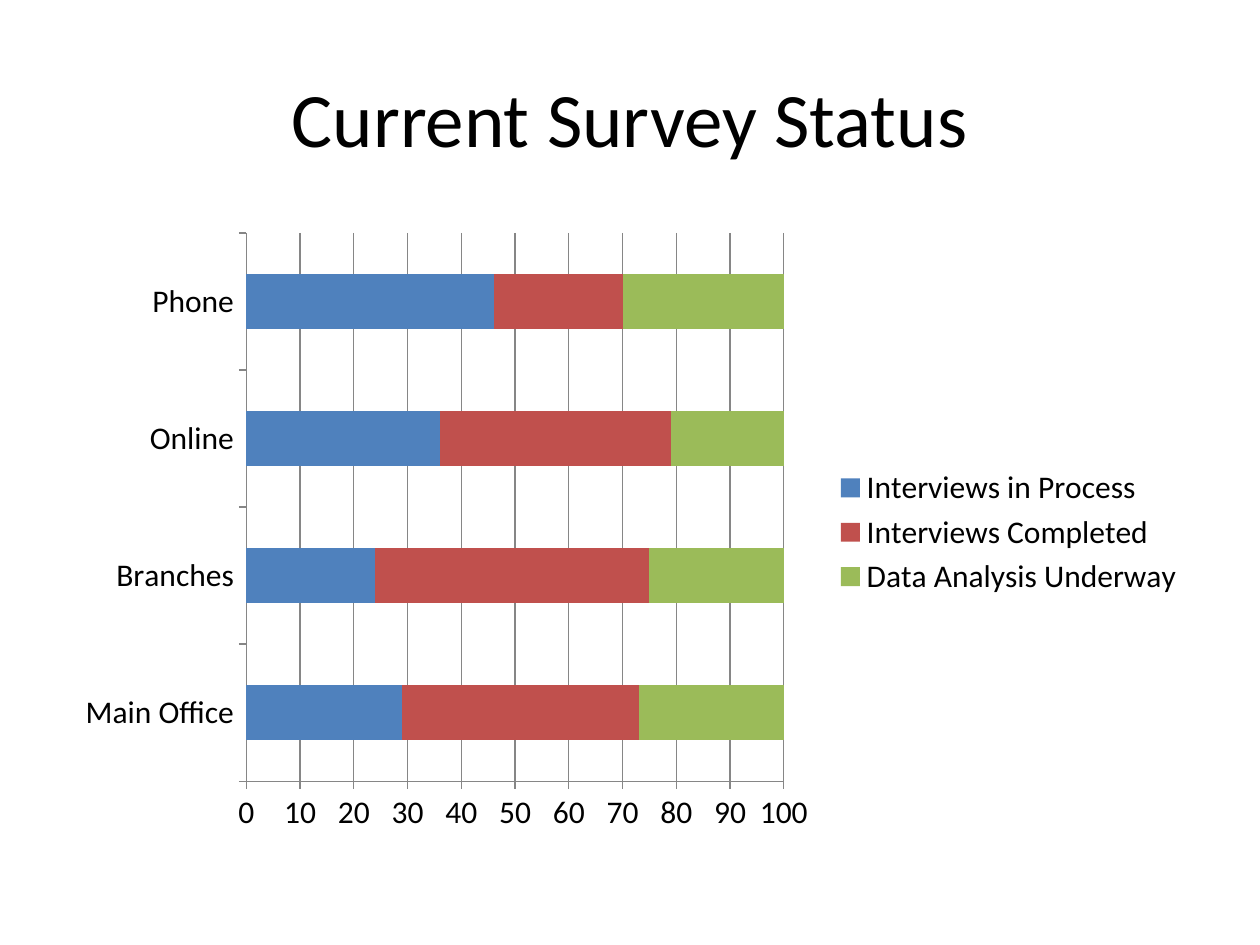
from pptx import Presentation
from pptx.chart.data import CategoryChartData
from pptx.dml.color import RGBColor
from pptx.enum.chart import XL_CHART_TYPE as ChartType, XL_LEGEND_POSITION as LegendPosition
from pptx.enum.chart import XL_TICK_MARK as TickMark
from pptx.enum.text import MSO_ANCHOR as Anchor, PP_ALIGN as Align
from pptx.util import Pt

FONT = "Calibri"
BLACK = "000000"
AXIS_GRAY = "868686"
CHANNELS = ["Main Office", "Branches", "Online", "Phone"]
STAGES = [
    ("Interviews in Process", [29, 24, 36, 46], "4F81BD"),
    ("Interviews Completed", [44, 51, 43, 24], "C0504D"),
    ("Data Analysis Underway", [27, 25, 21, 30], "9BBB59"),
]


def color(hex_value):
    return RGBColor.from_string(hex_value)


def style_font(font, size):
    font.name = FONT
    font.size = Pt(size)
    font.color.rgb = color(BLACK)


def style_line(line):
    line.color.rgb = color(AXIS_GRAY)
    line.width = Pt(0.75)


def add_title(slide, text):
    title = slide.shapes.add_textbox(Pt(36), Pt(21.6), Pt(648), Pt(90))
    frame = title.text_frame
    frame.word_wrap = True
    frame.vertical_anchor = Anchor.MIDDLE
    paragraph = frame.paragraphs[0]
    paragraph.alignment = Align.CENTER
    run = paragraph.add_run()
    run.text = text
    style_font(run.font, 44)


def add_status_chart(slide):
    status_data = CategoryChartData()
    status_data.categories = CHANNELS
    for name, values, _ in STAGES:
        status_data.add_series(name, values)
    chart = slide.shapes.add_chart(
        ChartType.BAR_STACKED, Pt(36), Pt(126), Pt(648), Pt(356.4), status_data
    ).chart
    chart.has_title = False
    style_font(chart.font, 18)

    plot = chart.plots[0]
    plot.gap_width = 150
    plot.overlap = 100
    plot.vary_by_categories = False
    for series, (_, _, fill_color) in zip(plot.series, STAGES):
        series.format.fill.solid()
        series.format.fill.fore_color.rgb = color(fill_color)

    for axis in (chart.category_axis, chart.value_axis):
        axis.major_tick_mark = TickMark.OUTSIDE
        axis.minor_tick_mark = TickMark.NONE
        style_line(axis.format.line)
    percent_axis = chart.value_axis
    percent_axis.minimum_scale = 0
    percent_axis.maximum_scale = 100
    percent_axis.major_unit = 10
    percent_axis.has_major_gridlines = True
    style_line(percent_axis.major_gridlines.format.line)

    chart.has_legend = True
    chart.legend.position = LegendPosition.RIGHT
    chart.legend.include_in_layout = False


def main():
    presentation = Presentation()
    presentation.slide_width = Pt(720)
    presentation.slide_height = Pt(540)
    slide = presentation.slides.add_slide(presentation.slide_layouts[6])
    add_title(slide, "Current Survey Status")
    add_status_chart(slide)
    presentation.save("out.pptx")


if __name__ == "__main__":
    main()
